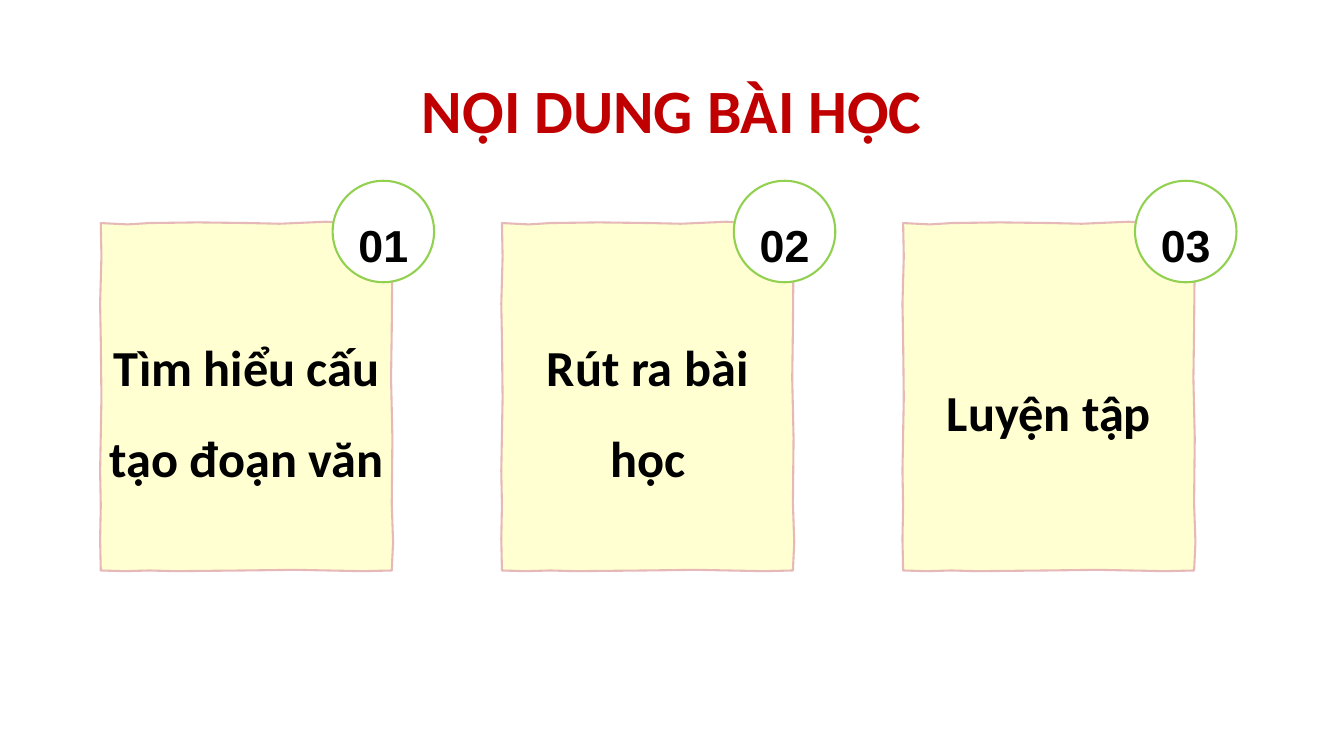
"""Build the lesson contents slide with three numbered note cards."""
from lxml import etree
from pptx import Presentation
from pptx.dml import color
from pptx.enum import shapes, text
from pptx.oxml import ns
from pptx.util import Inches, Pt

COLORS = {"title": "C00000", "text": "000000", "card": "FFFFCC",
          "border": "E6B9B8", "circle": "FFFFFF", "ring": "92D050"}
CARDS = ["Tìm hiểu cấu tạo đoạn văn", "Rút ra bài học", "Luyện tập"]
CARD_LEFT, CARD_TOP, CARD_PITCH = 1.5, 3.32, 5.97
CARD_WIDTH, CARD_HEIGHT = 4.33, 5.17
CIRCLE_SIZE = 1.51
OUTLINE = [(0, 0), (0.4, 0.02), (0.72, 0), (1.44, -0.01), (2.21, 0),
           (2.66, 0.01), (3.35, -0.02), (3.7, 0), (CARD_WIDTH, 0),
           (4.34, 0.4), (4.33, 1.58), (4.32, 2.31), (4.34, 3.2), (4.33, 4.17),
           (4.35, 4.75), (CARD_WIDTH, CARD_HEIGHT),
           (3.9, 5.18), (2.89, 5.16), (2.12, 5.17), (1.1, 5.18),
           (0.72, 5.17), (0.35, 5.18), (0, CARD_HEIGHT),
           (-0.01, 4.7), (0, 4.2), (-0.01, 3.69), (0.01, 2.6),
           (0, 1.73), (-0.01, 1.2), (0.01, 0.5)]


def write(shape, words, font, size, font_color, spacing):
    """Put one centred bold paragraph into a shape."""
    frame = shape.text_frame
    frame.text = words
    frame.word_wrap = True
    paragraph = frame.paragraphs[0]
    paragraph.alignment = text.PP_ALIGN.CENTER
    paragraph.line_spacing = spacing
    run = paragraph.runs[0]
    run.font.name = font
    run.font.size = Pt(size)
    run.font.bold = True
    run.font.color.rgb = color.RGBColor.from_string(COLORS[font_color])


def paint(shape, fill, line):
    """Give a shape its fill, its outline and middle-anchored text."""
    shape.shadow.inherit = False
    shape.fill.solid()
    shape.fill.fore_color.rgb = color.RGBColor.from_string(COLORS[fill])
    shape.line.color.rgb = color.RGBColor.from_string(COLORS[line])
    shape.line.width = Pt(2.25)
    shape.text_frame.vertical_anchor = text.MSO_ANCHOR.MIDDLE


presentation = Presentation()
presentation.slide_width = Inches(20)
presentation.slide_height = Inches(11.25)
slide = presentation.slides.add_slide(presentation.slide_layouts[6])

title = slide.shapes.add_textbox(Inches(5.37), Inches(0.79), Inches(9.26), Inches(1.29))
write(title, "NỘI DUNG BÀI HỌC", "Calibri", 66, "title", Pt(99.6))
title_frame = title.text_frame
title_frame.margin_left = title_frame.margin_right = 0
title_frame.margin_top = title_frame.margin_bottom = 0
title_frame.auto_size = text.MSO_AUTO_SIZE.SHAPE_TO_FIT_TEXT

for index, words in enumerate(CARDS):
    left = CARD_LEFT + index * CARD_PITCH
    group = slide.shapes.add_group_shape()

    points = [(Inches(left + x), Inches(CARD_TOP + y)) for x, y in OUTLINE]
    builder = group.shapes.build_freeform(*points[0])
    builder.add_line_segments(points[1:], close=True)
    card = builder.convert_to_shape()
    paint(card, "card", "border")
    card_color = card.fill._xPr.find(ns.qn("a:solidFill"))[0]
    etree.SubElement(card_color, ns.qn("a:alpha"), val="90000")
    write(card, words, "Calibri", 54, "text", 1.5)

    circle = group.shapes.add_shape(
        shapes.MSO_SHAPE.OVAL, Inches(left + 3.45), Inches(2.69),
        Inches(CIRCLE_SIZE), Inches(CIRCLE_SIZE))
    paint(circle, "circle", "ring")
    write(circle, f"{index + 1:02d}", "Arial", 48, "text", 1.5)

presentation.save("out.pptx")
